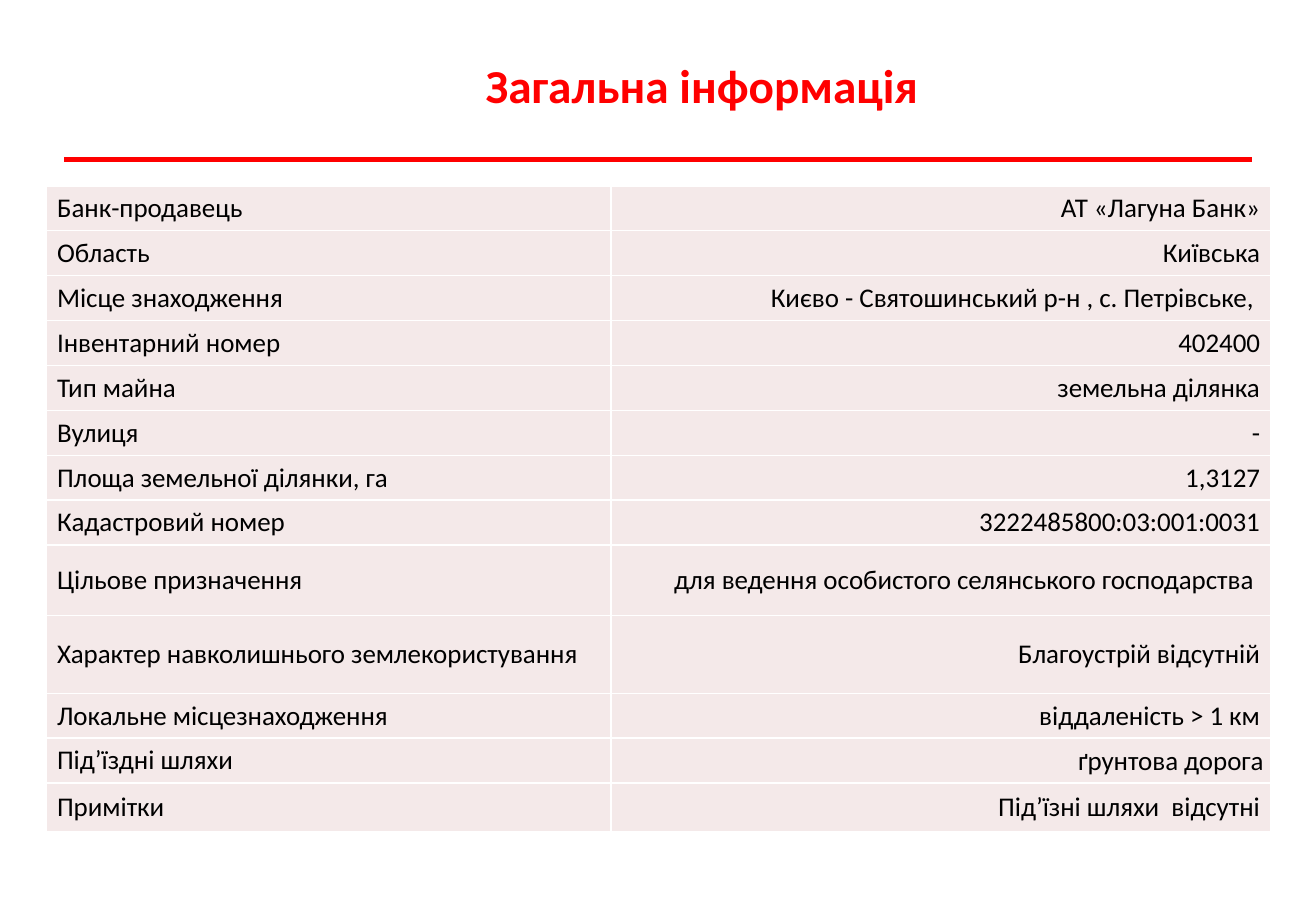
from typing import NamedTuple

import lxml.etree
import pptx
import pptx.dml.color
import pptx.enum.shapes
import pptx.enum.text
import pptx.oxml.ns
import pptx.util

EMU_PER_PX = 9144
FONT = "Calibri"
RED = "FF0000"
BLACK = "000000"
WHITE = "FFFFFF"
PALE_ROSE = "F4E9E9"
LEFT = pptx.enum.text.PP_ALIGN.LEFT
CENTER = pptx.enum.text.PP_ALIGN.CENTER
RIGHT = pptx.enum.text.PP_ALIGN.RIGHT
MIDDLE = pptx.enum.text.MSO_ANCHOR.MIDDLE


class Insets(NamedTuple):
    left: int = 9
    top: int = 5
    right: int = 9
    bottom: int = 5


class Fact(NamedTuple):
    label: str
    value: str
    height: int = 37
    value_insets: Insets = Insets()


FACTS = [
    Fact("Банк-продавець", "АТ «Лагуна Банк»"),
    Fact("Область", "Київська"),
    Fact("Місце знаходження", "Києво - Святошинський р-н , с. Петрівське, "),
    Fact("Інвентарний номер", "402400"),
    Fact("Тип майна", "земельна ділянка"),
    Fact("Вулиця", "-"),
    Fact("Площа земельної ділянки, га", "1,3127"),
    Fact("Кадастровий номер", "3222485800:03:001:0031"),
    Fact("Цільове призначення", "для ведення особистого селянського господарства ", 58),
    Fact("Характер навколишнього землекористування", "Благоустрій відсутній", 64),
    Fact("Локальне місцезнаходження", "віддаленість > 1 км"),
    Fact("Під’їздні шляхи", "ґрунтова дорога ", value_insets=Insets(1, 1, 1, 0)),
    Fact("Примітки", "Під’їзні шляхи  відсутні", 40),
]
COLUMN_WIDTHS = [465, 543]


def px(length: int) -> pptx.util.Emu:
    return pptx.util.Emu(length * EMU_PER_PX)


def color(hex_value: str) -> pptx.dml.color.RGBColor:
    return pptx.dml.color.RGBColor.from_string(hex_value)


def write_text(frame, text: str, *, size: int, hex_value: str = BLACK,
               bold: bool = False, align=LEFT) -> None:
    paragraph = frame.paragraphs[0]
    paragraph.alignment = align
    run = paragraph.add_run()
    run.text = text
    run.font.name = FONT
    run.font.size = pptx.util.Pt(size)
    run.font.bold = bold
    run.font.color.rgb = color(hex_value)


def draw_title(slide, text: str) -> None:
    title = slide.shapes.add_textbox(px(172), px(29), px(811), px(81))
    title.text_frame.word_wrap = True
    title.text_frame.vertical_anchor = MIDDLE
    write_text(title.text_frame, text, size=28, hex_value=RED, bold=True, align=CENTER)


def draw_rule(slide) -> None:
    rule = slide.shapes.add_connector(
        pptx.enum.shapes.MSO_CONNECTOR.STRAIGHT, px(53), px(131), px(1030), px(131))
    rule.line.color.rgb = color(RED)
    rule.line.width = pptx.util.Pt(3)
    properties = rule._element.spPr
    lxml.etree.SubElement(properties, pptx.oxml.ns.qn("a:effectLst"))


def add_borders(cell) -> None:
    properties = cell._tc.get_or_add_tcPr()
    for side in ("a:lnL", "a:lnR", "a:lnT", "a:lnB"):
        border = lxml.etree.SubElement(
            properties, pptx.oxml.ns.qn(side), w=str(pptx.util.Pt(1)))
        fill = lxml.etree.SubElement(border, pptx.oxml.ns.qn("a:solidFill"))
        lxml.etree.SubElement(fill, pptx.oxml.ns.qn("a:srgbClr"), val=WHITE)


def fill_cell(cell, text: str, align, insets: Insets) -> None:
    add_borders(cell)
    cell.fill.solid()
    cell.fill.fore_color.rgb = color(PALE_ROSE)
    cell.vertical_anchor = MIDDLE
    cell.margin_left = px(insets.left)
    cell.margin_top = px(insets.top)
    cell.margin_right = px(insets.right)
    cell.margin_bottom = px(insets.bottom)
    write_text(cell.text_frame, text, size=16, align=align)


def draw_facts(slide, facts: list[Fact]) -> None:
    total_height = sum(fact.height for fact in facts)
    table = slide.shapes.add_table(
        len(facts), len(COLUMN_WIDTHS), px(38), px(153),
        px(sum(COLUMN_WIDTHS)), px(total_height)).table
    table.first_row = False
    table.horz_banding = False
    for column, width in zip(table.columns, COLUMN_WIDTHS):
        column.width = px(width)
    for index, fact in enumerate(facts):
        table.rows[index].height = px(fact.height)
        fill_cell(table.cell(index, 0), fact.label, LEFT, Insets())
        fill_cell(table.cell(index, 1), fact.value, RIGHT, fact.value_insets)


def main() -> None:
    presentation = pptx.Presentation()
    presentation.slide_width = px(1083)
    presentation.slide_height = px(750)
    slide = presentation.slides.add_slide(presentation.slide_layouts[6])
    draw_rule(slide)
    draw_title(slide, "Загальна інформація")
    draw_facts(slide, FACTS)
    presentation.save("out.pptx")


if __name__ == "__main__":
    main()
